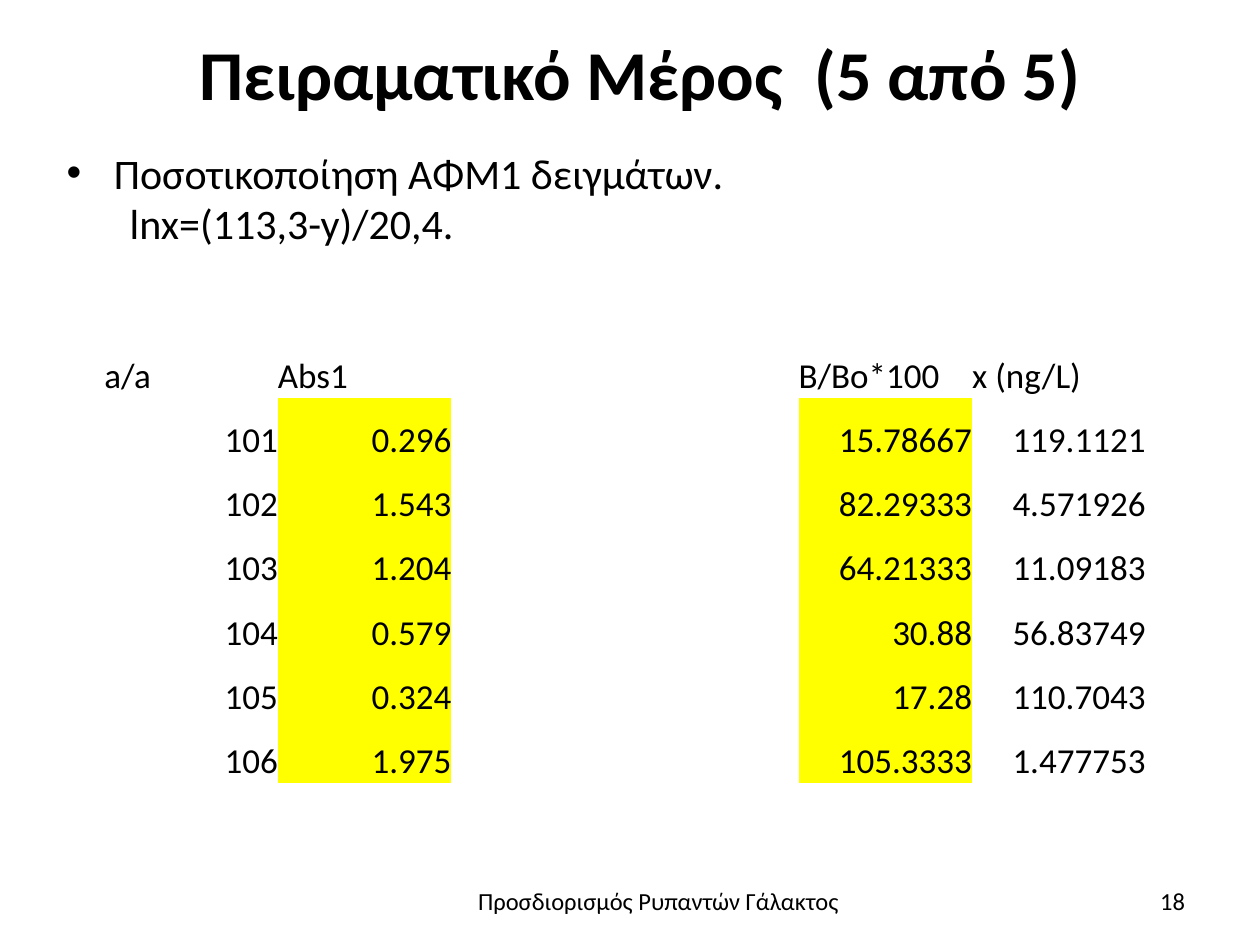
from dataclasses import dataclass

from lxml import etree
from pptx import Presentation
from pptx.dml.color import RGBColor
from pptx.enum import text
from pptx.oxml import ns
from pptx.util import Pt


@dataclass(frozen=True)
class Theme:
    font: str = "Calibri"
    ink: RGBColor = RGBColor(0, 0, 0)
    highlight: RGBColor = RGBColor(255, 255, 0)
    title: int = 40
    body: int = 24
    table: int = 20
    footer: int = 14


THEME = Theme()
LEFT, CENTER, RIGHT = text.PP_ALIGN.LEFT, text.PP_ALIGN.CENTER, text.PP_ALIGN.RIGHT
TOP, MIDDLE, BOTTOM = text.MSO_ANCHOR.TOP, text.MSO_ANCHOR.MIDDLE, text.MSO_ANCHOR.BOTTOM
PLAIN_TABLE_STYLE = "{2D5ABB26-0587-4C30-8999-92F81FD0307C}"

HEADINGS = ("a/a", "Abs1", "", "", "B/Bo*100", "x (ng/L)")
SAMPLES = (
    ("101", "0.296", "", "", "15.78667", "119.1121"),
    ("102", "1.543", "", "", "82.29333", "4.571926"),
    ("103", "1.204", "", "", "64.21333", "11.09183"),
    ("104", "0.579", "", "", "30.88", "56.83749"),
    ("105", "0.324", "", "", "17.28", "110.7043"),
    ("106", "1.975", "", "", "105.3333", "1.477753"),
)
HIGHLIGHTED_COLUMNS = (1, 4)


def write(paragraph, content, *, size, bold=False, align=LEFT):
    paragraph.alignment = align
    paragraph.font.size = Pt(size)
    if content:
        run = paragraph.add_run()
        run.text = content
        run.font.name = THEME.font
        run.font.size = Pt(size)
        run.font.bold = bold
        run.font.color.rgb = THEME.ink


def add_bullet(paragraph, indent):
    properties = paragraph._p.get_or_add_pPr()
    properties.set("marL", str(Pt(indent)))
    properties.set("indent", str(-Pt(indent)))
    etree.SubElement(properties, ns.qn("a:buFont")).set("typeface", "Arial")
    etree.SubElement(properties, ns.qn("a:buChar")).set("char", "•")


def add_text_frame(slide, box, anchor=TOP):
    frame = slide.shapes.add_textbox(*map(Pt, box)).text_frame
    frame.word_wrap = True
    frame.vertical_anchor = anchor
    return frame


def add_title(slide, box):
    frame = add_text_frame(slide, box, MIDDLE)
    write(frame.paragraphs[0], "Πειραματικό Μέρος  (5 από 5)",
          size=THEME.title, bold=True, align=CENTER)


def add_formula(slide, box):
    frame = add_text_frame(slide, box)
    frame.auto_size = text.MSO_AUTO_SIZE.SHAPE_TO_FIT_TEXT
    bullet = frame.paragraphs[0]
    add_bullet(bullet, 27)
    write(bullet, "Ποσοτικοποίηση ΑΦΜ1 δειγμάτων.", size=THEME.body)
    write(frame.add_paragraph(), "\tlnx=(113,3-y)/20,4.", size=THEME.body)


def add_results(slide, box):
    rows = (HEADINGS, *SAMPLES)
    shape = slide.shapes.add_table(len(rows), len(HEADINGS), *map(Pt, box))
    shape.element.find(".//" + ns.qn("a:tableStyleId")).text = PLAIN_TABLE_STYLE
    table = shape.table
    table.first_row = table.horz_banding = False
    for row_index, row in enumerate(rows):
        for column_index, value in enumerate(row):
            cell = table.cell(row_index, column_index)
            cell.margin_left = cell.margin_right = 0
            cell.margin_top = cell.margin_bottom = 0
            cell.vertical_anchor = BOTTOM
            if row_index and column_index in HIGHLIGHTED_COLUMNS:
                cell.fill.solid()
                cell.fill.fore_color.rgb = THEME.highlight
            else:
                cell.fill.background()
            write(cell.text_frame.paragraphs[0], value, size=THEME.table,
                  align=RIGHT if row_index else LEFT)


def add_footer(slide, box, content, *, align, anchor=TOP):
    frame = add_text_frame(slide, box, anchor)
    write(frame.paragraphs[0], content, size=THEME.footer, align=align)


def main():
    presentation = Presentation()
    presentation.slide_width, presentation.slide_height = Pt(720), Pt(540)
    slide = presentation.slides.add_slide(presentation.slide_layouts[6])
    add_title(slide, (31, 0.7, 669, 82))
    add_results(slide, (59.6, 190.8, 595.2, 256.76))
    add_formula(slide, (31, 80.6, 655, 65.5))
    add_footer(slide, (250.6, 502.6, 251.3, 39.6),
               "Προσδιορισμός Ρυπαντών Γάλακτος", align=CENTER)
    add_footer(slide, (516.2, 500.4, 168, 28.8), "18", align=RIGHT, anchor=MIDDLE)
    presentation.save("out.pptx")


if __name__ == "__main__":
    main()
